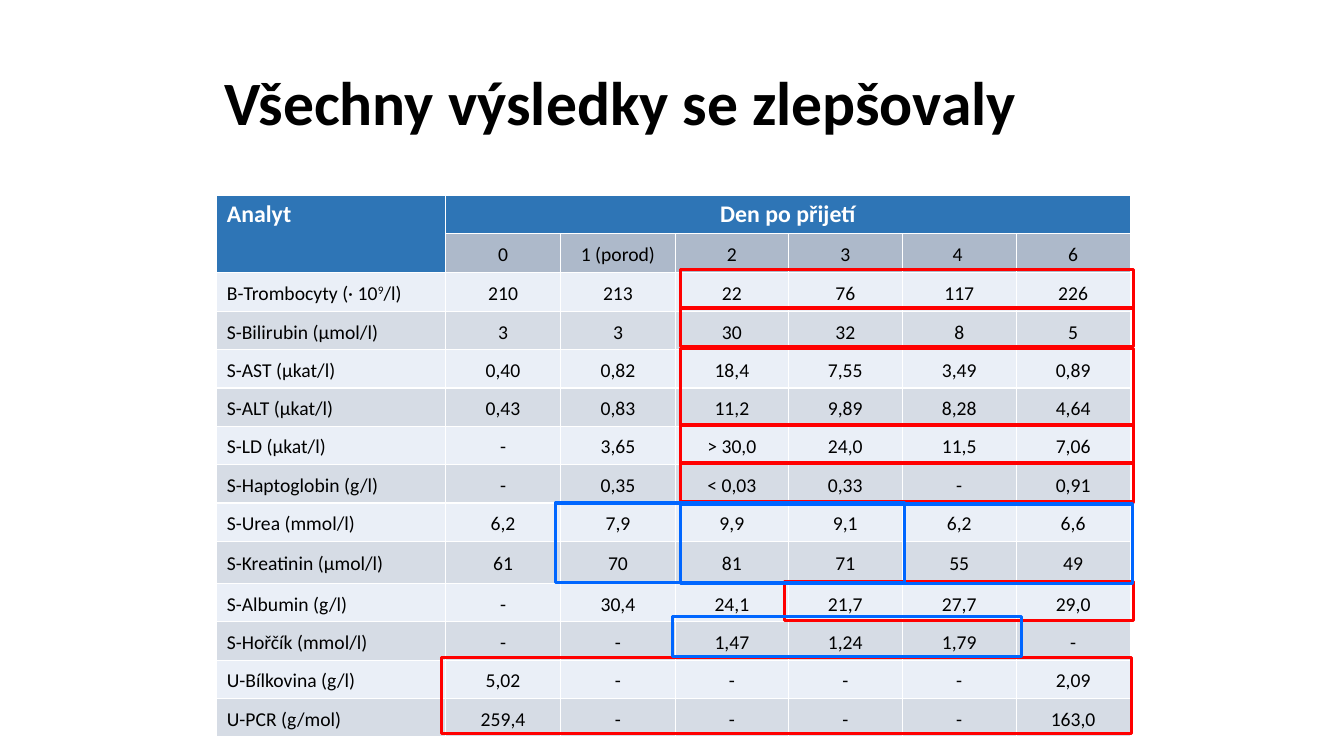
import lxml.etree
import pptx
import pptx.dml.color
import pptx.enum.shapes
import pptx.enum.text
import pptx.oxml.ns
import pptx.util

Inches, Pt = pptx.util.Inches, pptx.util.Pt
ALIGN, ANCHOR = pptx.enum.text.PP_ALIGN, pptx.enum.text.MSO_ANCHOR
qn = pptx.oxml.ns.qn

RED, BLUE = "FF0000", "0066FF"
HEADER, SUBHEADER = "2E75B6", "ADB9CA"
BANDS = ["EAEFF7", "D6DCE5"]

COLS = [2.27, 1.14, 1.14, 1.12, 1.13, 1.13, 1.13]
ROWS = [0.38, 0.38, 0.39] + [0.38] * 6 + [0.42] + [0.38] * 4
DAYS = ["0", "1 (porod)", "2", "3", "\t4", "6"]
RESULTS = [
    ["B-Trombocyty (· 10^9^/l)", "210", "213", "22", "76", "117", "226"],
    ["S-Bilirubin (µmol/l)", "3", "3", "30", "32", "8", "5"],
    ["S-AST (µkat/l)", "0,40", "0,82", "18,4", "7,55", "3,49", "0,89"],
    ["S-ALT (µkat/l)", "0,43", "0,83", "11,2", "9,89", "8,28", "4,64"],
    ["S-LD (µkat/l)", "-", "3,65", "> 30,0", "24,0", "11,5", "7,06"],
    ["S-Haptoglobin (g/l)", "-", "0,35", "< 0,03", "0,33", "-", "0,91"],
    ["S-Urea (mmol/l)", "6,2", "7,9", "9,9", "9,1", "6,2", "6,6"],
    ["S-Kreatinin (µmol/l)", "61", "70", "81", "71", "55", "49"],
    ["S-Albumin (g/l)", "-", "30,4", "24,1", "21,7", "27,7", "29,0"],
    ["S-Hořčík (mmol/l)", "-", "-", "1,47", "1,24", "1,79", "-"],
    ["U-Bílkovina (g/l)", "5,02", "-", "-", "-", "-", "2,09"],
    ["U-PCR (g/mol)", "259,4", "-", "-", "-", "-", "163,0"],
]
FRAMES = [
    (6.75, 2.67, 4.49, 0.39, RED),
    (6.75, 3.05, 4.49, 0.39, RED),
    (6.75, 3.46, 4.49, 0.76, RED),
    (6.75, 4.21, 4.49, 0.39, RED),
    (6.75, 4.59, 4.49, 0.39, RED),
    (7.78, 5.77, 3.46, 0.39, RED),
    (4.38, 6.52, 6.84, 0.76, RED),
    (5.51, 4.99, 3.46, 0.79, BLUE),
    (6.67, 6.12, 3.46, 0.39, BLUE),
    (6.75, 5.00, 4.48, 0.79, BLUE),
]


def rgb(color):
    return pptx.dml.color.RGBColor.from_string(color)


def write(tf, text, size=14, color="000000", bold=False, align=ALIGN.LEFT,
          spacing=1.15, before=0, after=0):
    """Fill the first paragraph; text between carets is superscript."""
    p = tf.paragraphs[0]
    p.alignment, p.line_spacing = align, spacing
    p.space_before, p.space_after = Pt(before), Pt(after)
    for i, part in enumerate(text.split("^")):
        r = p.add_run()
        r.text = part
        r.font.name, r.font.size, r.font.bold = "Calibri", Pt(size), bold
        r.font.color.rgb = rgb(color)
        if i % 2:
            r.font._element.set("baseline", "30000")
    return p


class ResultsSlide:
    def __init__(self, prs):
        self.s = prs.slides.add_slide(prs.slide_layouts[5])

    def title(self, text, x, y, w, h):
        sp = self.s.shapes.title
        sp.left, sp.top, sp.width, sp.height = map(Inches, (x, y, w, h))
        sp.text_frame.word_wrap = True
        sp.text_frame.vertical_anchor = ANCHOR.MIDDLE
        write(sp.text_frame, text, size=44, bold=True, spacing=0.9)

    def table(self, x, y, cols, rows):
        frame = self.s.shapes.add_table(len(rows), len(cols), Inches(x), Inches(y),
                                        Inches(sum(cols)), Inches(sum(rows)))
        tbl = frame.table
        tbl.first_row = tbl.horz_banding = False
        for lines, sizes, side in ((tbl.columns, cols, "width"), (tbl.rows, rows, "height")):
            for line, size in zip(lines, sizes):
                setattr(line, side, Inches(size))
        return tbl

    def cell(self, cell, fill, text="", indent=0, tab=None, anchor=ANCHOR.MIDDLE, **fmt):
        cell.margin_left = cell.margin_right = cell.margin_top = cell.margin_bottom = 0
        cell.vertical_anchor = anchor
        tcPr = cell._tc.get_or_add_tcPr()
        for side in ("a:lnL", "a:lnR", "a:lnT", "a:lnB"):
            ln = lxml.etree.SubElement(tcPr, qn(side), w=str(Pt(1)))
            solid = lxml.etree.SubElement(ln, qn("a:solidFill"))
            lxml.etree.SubElement(solid, qn("a:srgbClr"), val="FFFFFF")
        cell.fill.solid()
        cell.fill.fore_color.rgb = rgb(fill)
        if not text:
            return
        pPr = write(cell.text_frame, text, **fmt)._p.get_or_add_pPr()
        pPr.set("marL", "0")
        pPr.set("indent", str(Inches(indent)))
        if tab:
            tabs = lxml.etree.SubElement(pPr, qn("a:tabLst"))
            lxml.etree.SubElement(tabs, qn("a:tab"), pos=str(Inches(tab)), algn="l")

    def frame(self, x, y, w, h, color):
        sp = self.s.shapes.add_shape(pptx.enum.shapes.MSO_SHAPE.RECTANGLE,
                                     Inches(x), Inches(y), Inches(w), Inches(h))
        sp.shadow.inherit = False
        sp.fill.background()
        sp.line.color.rgb = rgb(color)
        sp.line.width = Pt(2.25)


def main():
    prs = pptx.Presentation()
    prs.slide_width, prs.slide_height = Inches(13.33), Inches(7.5)
    slide = ResultsSlide(prs)
    slide.title("Všechny výsledky se zlepšovaly", 2.13, 0.48, 9.03, 1.14)

    # Table header: two merged cells and the row of days
    tbl = slide.table(2.15, 1.94, COLS, ROWS)
    tbl.cell(0, 0).merge(tbl.cell(1, 0))
    tbl.cell(0, 1).merge(tbl.cell(0, 6))
    head = dict(size=17, color="FFFFFF", bold=True, before=2, after=2, anchor=ANCHOR.TOP)
    slide.cell(tbl.cell(0, 0), HEADER, "Analyt", indent=0.1, **head)
    slide.cell(tbl.cell(1, 0), HEADER)
    slide.cell(tbl.cell(0, 1), HEADER, "Den po přijetí", align=ALIGN.CENTER, **head)
    for c in range(2, 7):
        slide.cell(tbl.cell(0, c), HEADER)
    for c, day in enumerate(DAYS, 1):
        tabbed = day.startswith("\t")
        slide.cell(tbl.cell(1, c), SUBHEADER, day, tab=0.25 if tabbed else None,
                   align=ALIGN.LEFT if tabbed else ALIGN.CENTER, before=1, after=2)

    # Analytes and their values in banded rows
    for i, (analyte, *values) in enumerate(RESULTS):
        fill = BANDS[i % 2]
        slide.cell(tbl.cell(i + 2, 0), fill, analyte, indent=0.1, before=2, after=2)
        for c, value in enumerate(values, 1):
            slide.cell(tbl.cell(i + 2, c), fill, value, align=ALIGN.CENTER,
                       before=1, after=2)

    # Frames around the notable values
    for frame in FRAMES:
        slide.frame(*frame)

    prs.save("out.pptx")


if __name__ == "__main__":
    main()
